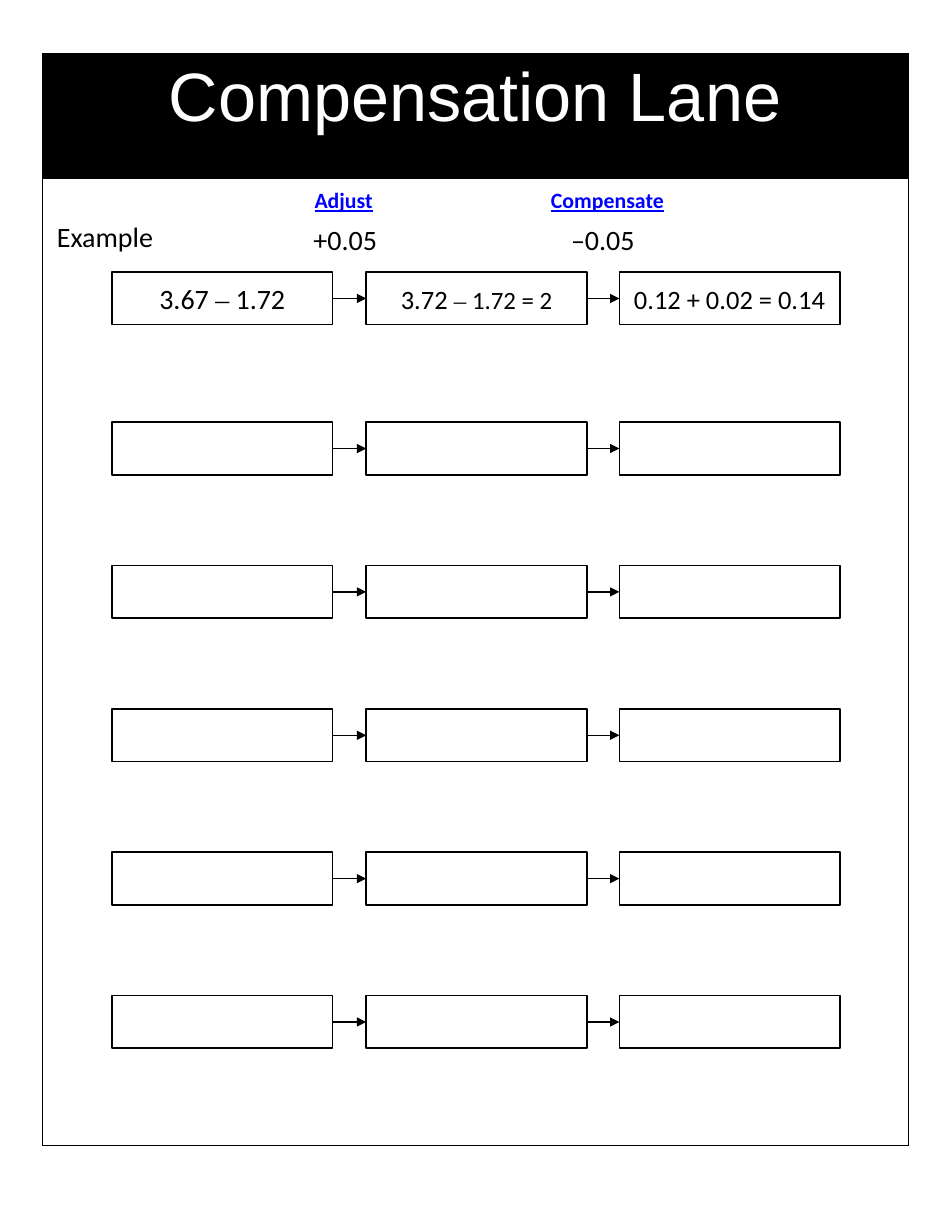
from dataclasses import dataclass
from typing import Any

from lxml.etree import SubElement as Sub
from pptx import Presentation
from pptx.dml.color import RGBColor as Rgb
from pptx.enum.shapes import MSO_CONNECTOR as Link, MSO_SHAPE as Kind
from pptx.enum.text import MSO_ANCHOR as Anchor, MSO_AUTO_SIZE as Fit, PP_ALIGN as Align
from pptx.oxml.ns import qn
from pptx.util import Pt

PX = 9144  # 100 px to the inch


@dataclass(frozen=True)
class Theme:
    black: str = "000000"
    white: str = "FFFFFF"
    blue: str = "0000FF"
    sans: str = "Calibri"
    serif: str = "Times New Roman"
    head: str = "Arial"
    title: int = 44
    body: int = 18
    sum: int = 17
    small: int = 16
    label: int = 14
    line: int = 1


T = Theme()


@dataclass(frozen=True)
class Words:
    text: str
    size: int = T.body
    font: str = T.sans
    color: str = T.black
    bold: bool = False
    under: bool = False


@dataclass(frozen=True)
class Note:
    left: int
    top: int
    width: int
    height: int
    words: Words
    inset: int = 5


# Layout of the lanes
COLS = (100, 327, 553)
BOX_W, BOX_H = 197, 47
FIRST, STEP, LANES = 377, 128, 5
SAMPLE = 243

STEPS = (
    (Words("3.67 "), Words("–", font=T.serif), Words(" 1.72")),
    (Words("3.72", T.sum), Words(" –", T.small, T.serif), Words(" 1.72 = 2", T.small)),
    (Words("0.12 + 0.02 = 0.14", T.sum),),
)


def tag(text: str) -> Words:
    return Words(text, T.label, color=T.blue, bold=True, under=True)


NOTES = (
    Note(41, 191, 197, 40, Words("Example")),
    Note(270, 194, 238, 40, Words("+0.05")),
    Note(500, 194, 88, 40, Words("–0.05")),
    Note(482, 157, 128, 44, tag("Compensate"), 10),
    Note(271, 157, 102, 44, tag("Adjust"), 10),
)


def write(para: Any, pieces: tuple[Words, ...]) -> None:
    for piece in pieces:
        run = para.add_run()
        run.text = piece.text
        font = run.font
        font.name, font.size = piece.font, Pt(piece.size)
        font.bold, font.underline = piece.bold, piece.under
        font.color.rgb = Rgb.from_string(piece.color)


def add_box(group: Any, left: int, top: int, pieces: tuple[Words, ...]) -> Any:
    box = group.shapes.add_shape(Kind.RECTANGLE, left * PX, top * PX, BOX_W * PX, BOX_H * PX)
    box.shadow.inherit = False
    box.fill.solid()
    box.fill.fore_color.rgb = Rgb.from_string(T.white)
    box.line.color.rgb = Rgb.from_string(T.black)
    box.line.width = Pt(T.line)
    if pieces:
        frame = box.text_frame
        frame.word_wrap = True
        frame.vertical_anchor = Anchor.MIDDLE
        frame.paragraphs[0].alignment = Align.CENTER
        write(frame.paragraphs[0], pieces)
    return box


def add_arrow(group: Any, start: Any, end: Any) -> None:
    mid = start.top + start.height // 2
    arrow = group.shapes.add_connector(
        Link.STRAIGHT, start.left + start.width, mid, end.left, mid)
    arrow.begin_connect(start, 3)
    arrow.end_connect(end, 1)
    arrow.line.color.rgb = Rgb.from_string(T.black)
    arrow.line.width = Pt(T.line)
    Sub(arrow.line._get_or_add_ln(), qn("a:tailEnd"), type="triangle")
    Sub(arrow._element.spPr, qn("a:effectLst"))


def add_lane(slide: Any, top: int, steps: tuple[tuple[Words, ...], ...] = ((), (), ())) -> None:
    group = slide.shapes.add_group_shape()
    boxes = [add_box(group, left, top, pieces) for left, pieces in zip(COLS, steps)]
    for start, end in zip(boxes, boxes[1:]):
        add_arrow(group, start, end)


def set_edges(cell: Any) -> None:
    props = cell._tc.get_or_add_tcPr()
    for spot, side in enumerate(("lnL", "lnR", "lnT", "lnB")):
        edge = props.makeelement(qn(f"a:{side}"), {"w": str(Pt(T.line))})
        Sub(Sub(edge, qn("a:solidFill")), qn("a:srgbClr"), val=T.black)
        props.insert(spot, edge)


def add_frame(slide: Any) -> None:
    table = slide.shapes.add_table(2, 1, 38 * PX, 48 * PX, 773 * PX, 975 * PX).table
    table.first_row = table.horz_banding = False
    for row, height in zip(table.rows, (111, 864)):
        row.height = height * PX
    head, body = table.cell(0, 0), table.cell(1, 0)
    head.fill.solid()
    head.fill.fore_color.rgb = Rgb.from_string(T.black)
    body.fill.background()
    for cell in (head, body):
        set_edges(cell)
    para = head.text_frame.paragraphs[0]
    para.alignment = Align.CENTER
    write(para, (Words("Compensation Lane", T.title, T.head, T.white),))


def add_note(slide: Any, note: Note) -> None:
    box = slide.shapes.add_textbox(
        note.left * PX, note.top * PX, note.width * PX, note.height * PX)
    frame = box.text_frame
    frame.word_wrap = True
    frame.auto_size = Fit.SHAPE_TO_FIT_TEXT
    frame.margin_top = frame.margin_bottom = note.inset * PX
    write(frame.paragraphs[0], (note.words,))


def main() -> None:
    deck = Presentation()
    deck.slide_width, deck.slide_height = 850 * PX, 1100 * PX
    slide = deck.slides.add_slide(deck.slide_layouts[6])

    # Page frame with title
    add_frame(slide)

    # Blank lanes, then the worked example
    for lane in range(LANES):
        add_lane(slide, FIRST + lane * STEP)
    add_lane(slide, SAMPLE, STEPS)

    # Labels above the example
    for note in NOTES:
        add_note(slide, note)

    deck.save("out.pptx")


if __name__ == "__main__":
    main()
